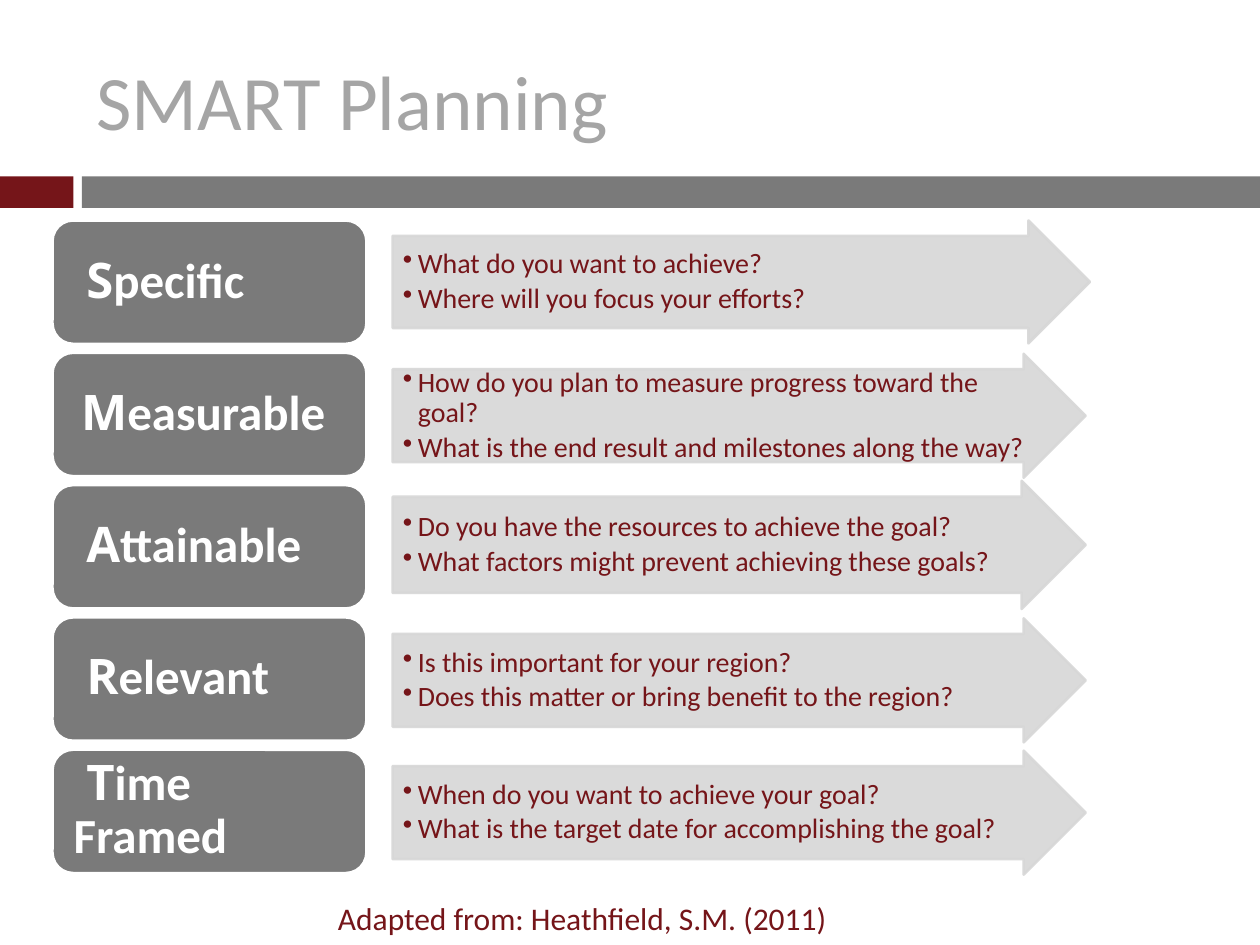
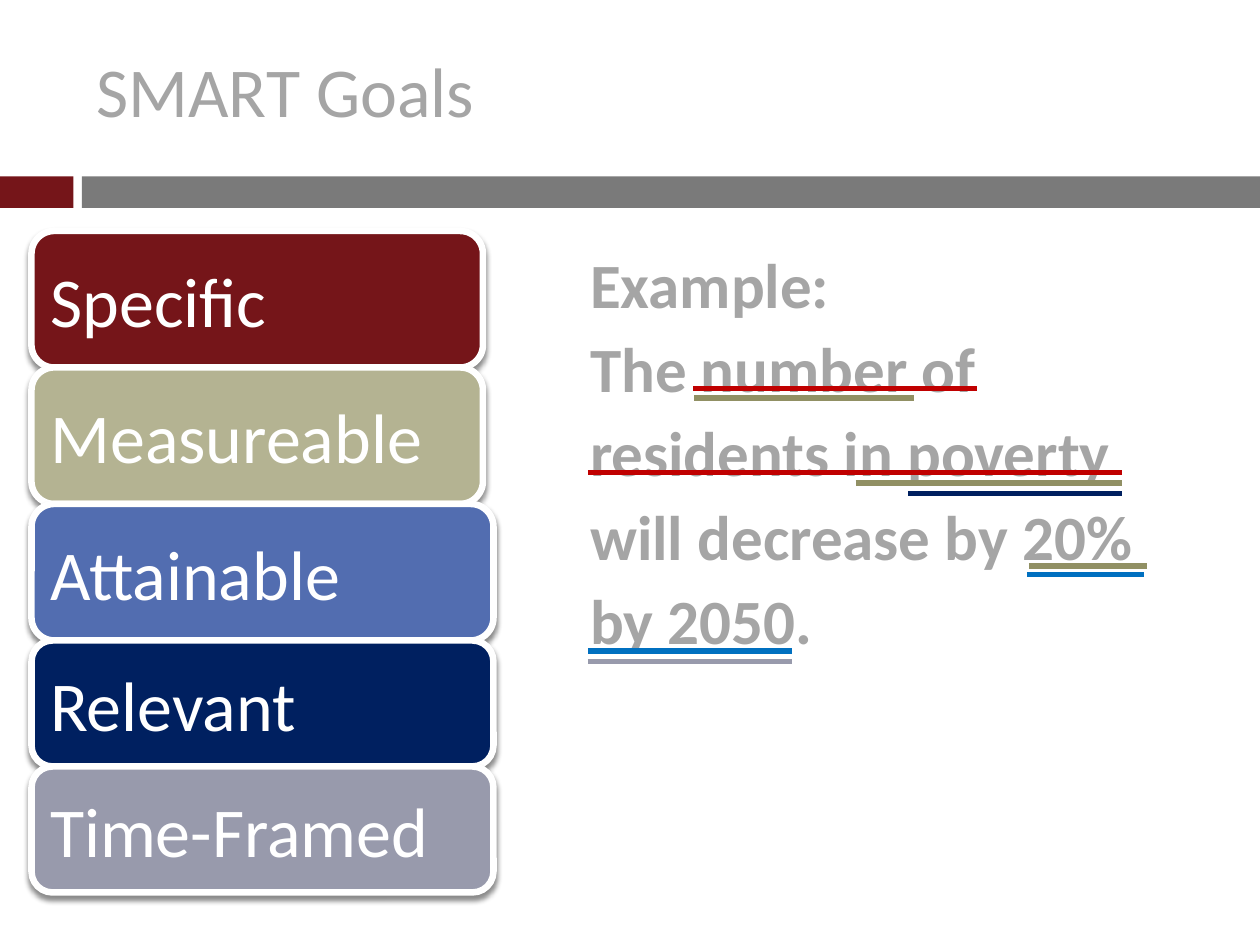
from lxml import etree
from pptx import Presentation
from pptx import util as u
from pptx.dml.color import RGBColor
from pptx.enum import shapes, text
from pptx.oxml.ns import qn

COLS, ROWS = 120, 90
MAROON, GRAY, PALE, TITLE, WHITE = "751519", "7A7A7A", "D7D7D7", "A5A5A5", "FFFFFF"
SAGE, BLUE, NAVY, LILAC = "B4B392", "526DB0", "002060", "989AAC"
RED, OLIVE, SKY = "C00000", "919064", "0070C0"
TOP, MIDDLE = text.MSO_ANCHOR.TOP, text.MSO_ANCHOR.MIDDLE
RECT, ROUND, ARROW = (shapes.MSO_SHAPE.RECTANGLE, shapes.MSO_SHAPE.ROUNDED_RECTANGLE,
                      shapes.MSO_SHAPE.RIGHT_ARROW)


def rgb(value):
    return RGBColor.from_string(value)


def sub(parent, tag, **attrs):
    return etree.SubElement(parent, qn(tag), {k: str(v) for k, v in attrs.items()})


def write(sp, paras, size, color, font="Calibri", bold=False, anchor=MIDDLE, insets=None,
          spacing=None, after=0, indent=(0, 0), bullet=None):
    tf = sp.text_frame
    tf.word_wrap = True
    tf.auto_size = text.MSO_AUTO_SIZE.NONE
    tf.vertical_anchor = anchor
    if insets:
        (tf.margin_left, tf.margin_top, tf.margin_right,
         tf.margin_bottom) = [u.Inches(i) for i in insets]
    for i, para in enumerate(paras):
        p = tf.add_paragraph() if i else tf.paragraphs[0]
        p.alignment = text.PP_ALIGN.LEFT
        p.line_spacing = spacing
        p.space_before, p.space_after = u.Pt(0), u.Pt(after)
        pPr = p._p.get_or_add_pPr()
        pPr.set("marL", str(u.Inches(indent[0])))
        pPr.set("indent", str(u.Inches(indent[1])))
        if bullet:
            sub(pPr, "a:buChar", char=bullet)
        else:
            sub(pPr, "a:buNone")
        for run, face in [(para, font)] if isinstance(para, str) else para:
            r = p.add_run()
            r.text = run
            r.font.name, r.font.size, r.font.bold = face, u.Pt(size), bold
            r.font.color.rgb = rgb(color)


class Deck:
    def __init__(self):
        self.prs = Presentation()
        self.prs.slide_width, self.prs.slide_height = u.Inches(10), u.Inches(7.5)
        self.s = None

    def x(self, col):
        return round(self.prs.slide_width * col / COLS)

    def y(self, row):
        return round(self.prs.slide_height * row / ROWS)

    def box(self, col, row, wide, high):
        return self.x(col), self.y(row), self.x(wide), self.y(high)

    def place(self, sp, *grid):
        sp.left, sp.top, sp.width, sp.height = self.box(*grid)

    def slide(self, layout, title, size, grid):
        self.s = self.prs.slides.add_slide(self.prs.slide_layouts.get_by_name(layout))
        self.place(self.s.shapes.title, *grid)
        write(self.s.shapes.title, [title], size, TITLE)
        self.shape(RECT, (0, 16.8, 7, 3), MAROON)
        self.shape(RECT, (7.8, 16.8, 112.2, 3), GRAY)

    def body(self, grid, paras, **fmt):
        sp = self.s.placeholders[1]
        self.place(sp, *grid)
        write(sp, paras, **fmt)

    def shape(self, kind, grid, fill, line=None, weight=1.5, alpha=None, shadow=False):
        sp = self.s.shapes.add_shape(kind, *self.box(*grid))
        sp.shadow.inherit = False
        sp.fill.solid()
        sp.fill.fore_color.rgb = rgb(fill)
        if line:
            sp.line.color.rgb = rgb(line)
            sp.line.width = u.Pt(weight)
        else:
            sp.line.fill.background()
        spPr = sp._element.spPr
        if alpha:
            for clr in spPr.iter(qn("a:srgbClr")):
                sub(clr, "a:alpha", val=alpha * 1000)
        if shadow:
            shade = sub(spPr.find(qn("a:effectLst")), "a:outerShdw", blurRad=u.Pt(3),
                        dist=u.Pt(2.4), dir=90 * 60000, rotWithShape=0)
            sub(sub(shade, "a:srgbClr", val="000000"), "a:alpha", val=45000)
        return sp

    def textbox(self, grid, paras, **fmt):
        write(self.s.shapes.add_textbox(*self.box(*grid)), paras, **fmt)

    def underline(self, start, end, row, color):
        ln = self.s.shapes.add_connector(shapes.MSO_CONNECTOR.STRAIGHT, self.x(start),
                                         self.y(row), self.x(end), self.y(row))
        ln.line.color.rgb = rgb(color)
        ln.line.width = u.Pt(3)
        sub(ln._element.spPr, "a:effectLst")


def planning(deck):
    deck.slide("Title Only", "SMART Planning", 44, (8, 3, 107, 13))
    steps = [
        (" S", "pecific", 21, 11.7, 66.4,
         ["What do you want to achieve?", "Where will you focus your efforts?"]),
        ("M", "easurable", 33.7, 11.8, 66,
         ["How do you plan to measure progress toward the goal?",
          "What is the end result and milestones along the way?"]),
        (" A", "ttainable", 45.8, 12.2, 66,
         ["Do you have the resources to achieve the goal?",
          "What factors might prevent achieving these goals?"]),
        (" R", "elevant", 58.9, 11.8, 66,
         ["Is this important for your region?",
          "Does this matter or bring benefit to the region?"]),
        (" T", "ime Framed", 71.5, 11.8, 66,
         ["When do you want to achieve your goal?",
          "What is the target date for accomplishing the goal?"]),
    ]
    for i, (initial, rest, row, high, wide, questions) in enumerate(steps):
        arrow = deck.shape(ARROW, (37.4, row, wide, high), PALE, PALE, alpha=90)
        arrow.adjustments[0], arrow.adjustments[1] = 0.75, 0.5
        deck.textbox((37.4, row + high / 8, wide - 4.4, high * 0.75), questions,
                     size=16, color=MAROON, insets=(0.01, 0.01, 0.01, 0.01), spacing=0.9,
                     after=2.4, indent=(0.19, -0.12), bullet="•")
        label = deck.shape(ROUND, (5, 21 + 12.6 * i, 29.9, 11.75), GRAY, WHITE)
        write(label, [[(initial, "Open Sans"), (rest, "Calibri")]], 28, WHITE, bold=True,
              insets=(0.12, 0.06, 0.12, 0.06), spacing=0.9,
              indent=(0, 0) if initial[0] == " " else (0.18, -0.12))
    deck.textbox((31, 85, 58, 4.8), ["Adapted from: Heathfield, S.M. (2011)"],
                 size=18, color=MAROON, anchor=TOP)


def goals(deck):
    deck.slide("Title and Content", "SMART Goals", 40, (8, 0, 100, 17))
    row = 22
    for name, color, wide, high in [("Specific", MAROON, 43, 13), ("Measureable", SAGE, 43, 13),
                                    ("Attainable", BLUE, 44, 13), ("Relevant", NAVY, 44, 12),
                                    ("Time-Framed", LILAC, 44, 12)]:
        sp = deck.shape(ROUND, (3, row, wide, high), color, WHITE, 3.75, shadow=True)
        write(sp, [name], 40, WHITE)
        row += high
    deck.body((55, 22, 60, 41.6),
              ["Example:", "The number of residents in poverty will decrease by 20% by 2050."],
              size=36, color=TITLE, bold=True, anchor=TOP, spacing=u.Pt(48))
    for mark in [(66, 93, 37, RED), (66.1, 87, 37.9, OLIVE),
                 (56, 106.9, 45, RED), (81.5, 106.9, 46, OLIVE), (86.5, 106.9, 47, NAVY),
                 (98, 109.2, 53.9, OLIVE), (97.8, 109, 54.7, SKY),
                 (56, 75.4, 62, SKY), (56, 75.4, 63, LILAC)]:
        deck.underline(*mark)


def main():
    deck = Deck()
    planning(deck)
    goals(deck)
    deck.prs.save("out.pptx")


if __name__ == "__main__":
    main()
